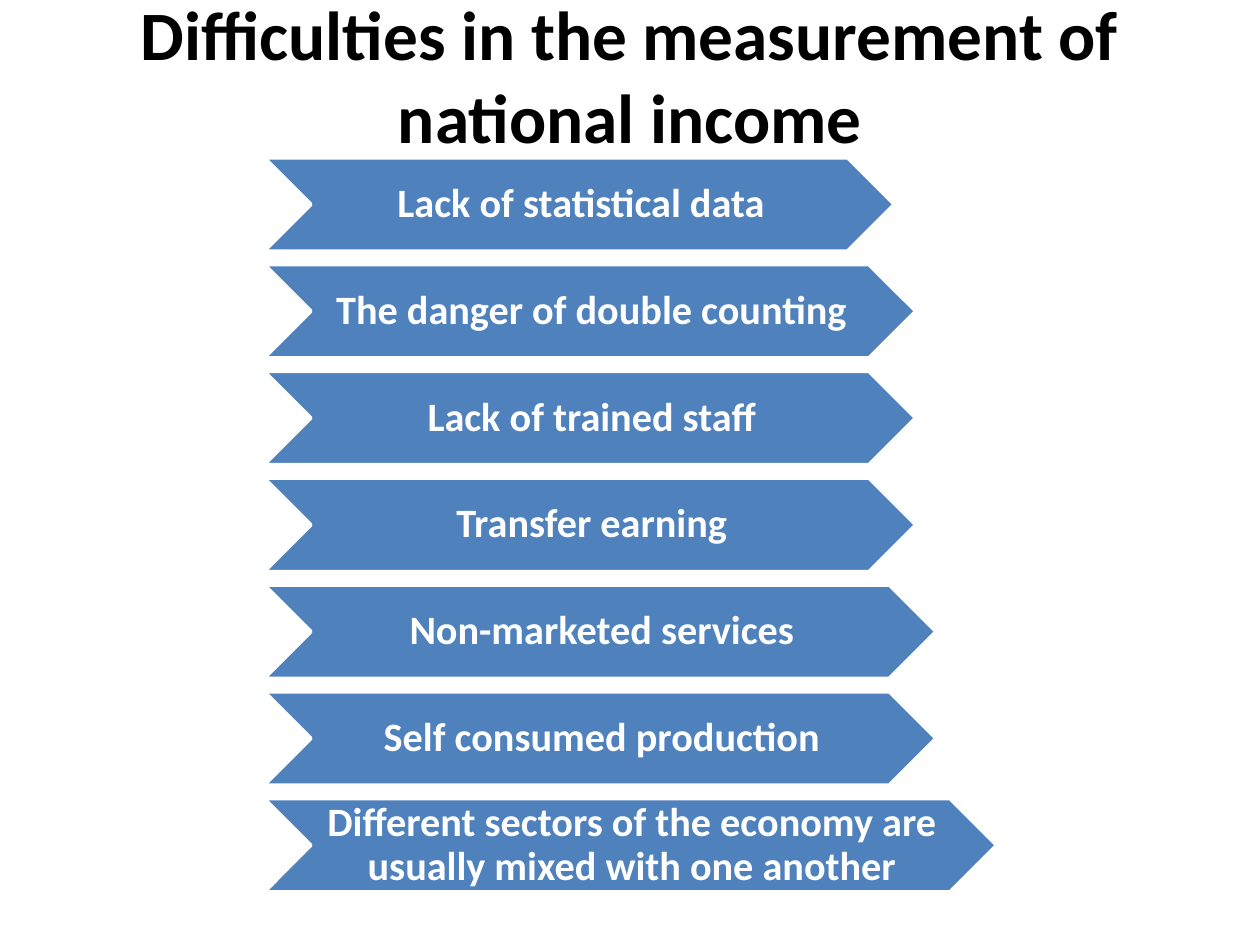
from dataclasses import dataclass

from pptx import Presentation
from pptx.dml.color import RGBColor
from pptx.enum.shapes import MSO_SHAPE
from pptx.enum.text import MSO_ANCHOR, MSO_AUTO_SIZE, PP_ALIGN
from pptx.util import Cm, Pt

CHEVRON = MSO_SHAPE.CHEVRON
MIDDLE = MSO_ANCHOR.MIDDLE
CENTER = PP_ALIGN.CENTER
NO_AUTOFIT = MSO_AUTO_SIZE.NONE


@dataclass(frozen=True)
class Theme:
    """Colours, font and type sizes of the slide."""
    font: str = "Calibri"
    title_color: RGBColor = RGBColor(0x00, 0x00, 0x00)
    accent: RGBColor = RGBColor(0x4F, 0x81, 0xBD)
    light: RGBColor = RGBColor(0xFF, 0xFF, 0xFF)
    title_size: float = 39.6
    label_size: float = 23
    outline: float = 2


THEME = Theme()
TITLE = "Difficulties in the measurement of national income"
DIFFICULTIES = [
    ("Lack of statistical data", 12.7),
    ("The danger of double counting", 13.13),
    ("Lack of trained staff", 13.13),
    ("Transfer earning", 13.13),
    ("Non-marketed services", 13.54),
    ("Self consumed production", 13.54),
    ("Different sectors of the economy are usually mixed with one another", 14.76),
]


def write_text(shape, text, size, color, insets, line_spacing=1.0):
    """Put one bold centred run in a shape, with insets left, top, right, bottom."""
    frame = shape.text_frame
    frame.word_wrap = True
    frame.auto_size = NO_AUTOFIT
    frame.vertical_anchor = MIDDLE
    frame.margin_left, frame.margin_top, frame.margin_right, frame.margin_bottom = map(Cm, insets)
    paragraph = frame.paragraphs[0]
    paragraph.alignment = CENTER
    paragraph.line_spacing = line_spacing
    run = paragraph.add_run()
    run.text = text
    run.font.name = THEME.font
    run.font.size = Pt(size)
    run.font.bold = True
    run.font.color.rgb = color


def add_title(slide, left, top, width, height):
    """Place the heading in the upper part of its box."""
    box = slide.shapes.add_textbox(Cm(left), Cm(top), Cm(width), Cm(height))
    write_text(box, TITLE, THEME.title_size, THEME.title_color, (0.25, 0.13, 0.25, 1.82))


def add_chevron_list(slide, left, top, height, gap_share=0.145):
    """Stack one chevron per difficulty evenly over the given height."""
    count = len(DIFFICULTIES)
    bar_height = height / (count + (count - 1) * gap_share * 1.285 / 1.285)
    pitch = bar_height * (1 + gap_share)
    group = slide.shapes.add_group_shape()
    for index, (label, width) in enumerate(DIFFICULTIES):
        chevron = group.shapes.add_shape(
            CHEVRON, Cm(left), Cm(top + index * pitch), Cm(width), Cm(bar_height))
        chevron.shadow.inherit = False
        chevron.fill.solid()
        chevron.fill.fore_color.rgb = THEME.accent
        chevron.line.color.rgb = THEME.light
        chevron.line.width = Pt(THEME.outline)
        write_text(chevron, label, THEME.label_size, THEME.light, (0.08, 0.05, 0, 0.05), 0.9)


def main():
    """Build and save the slide."""
    presentation = Presentation()
    presentation.slide_width = Cm(25.4)
    presentation.slide_height = Cm(19.05)
    slide = presentation.slides.add_slide(presentation.slide_layouts[6])
    add_title(slide, 1.27, 0.76, 22.86, 3.18)
    add_chevron_list(slide, 5.33, 3.18, 14.8)
    presentation.save("out.pptx")


if __name__ == "__main__":
    main()
